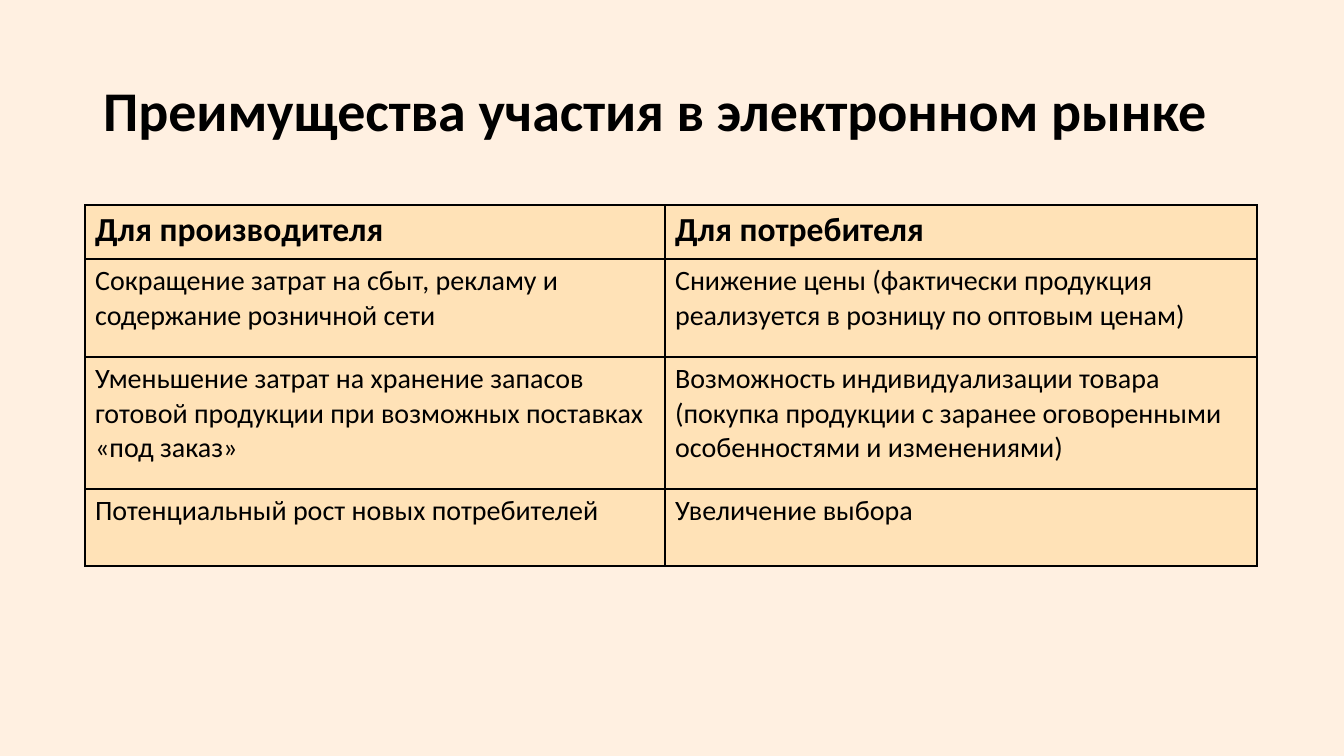
from lxml import etree
from pptx import Presentation, util as u
from pptx.dml.color import RGBColor
from pptx.enum import text as t
from pptx.oxml.ns import qn

PX = 914400 / 100.8
HUES = {"back": "FFF0E1", "cell": "FFE2B7", "ink": "000000"}
COLS = [580, 592]
ROWS = [54, 98, 132, 77]
GAINS = [
    ("Для производителя", "Для потребителя"),
    ("Сокращение затрат на сбыт, рекламу и содержание розничной сети",
     "Снижение цены (фактически продукция реализуется в розницу по оптовым ценам)"),
    ("Уменьшение затрат на хранение запасов готовой продукции при возможных поставках «под заказ»",
     "Возможность индивидуализации товара (покупка продукции с заранее оговоренными особенностями и изменениями)"),
    ("Потенциальный рост новых потребителей", "Увеличение выбора"),
]


def px(*vals):
    return [u.Emu(round(v * PX)) for v in vals]


def write(frame, words, size=20, bold=False, lead=1.0):
    par = frame.paragraphs[0]
    par.alignment = t.PP_ALIGN.LEFT
    par.line_spacing = lead
    run = par.add_run()
    run.text = words
    run.font.name = "Calibri"
    run.font.size = u.Pt(size)
    run.font.bold = bold
    run.font.color.rgb = RGBColor.from_string(HUES["ink"])


deck = Presentation()
deck.slide_width, deck.slide_height = px(1344, 756)
slide = deck.slides.add_slide(deck.slide_layouts[5])
back = slide.background.fill
back.solid()
back.fore_color.rgb = RGBColor.from_string(HUES["back"])

title = slide.shapes.title
title.left, title.top, title.width, title.height = px(93, 40, 1159, 146)
frame = title.text_frame
frame.word_wrap = True
frame.auto_size = t.MSO_AUTO_SIZE.NONE
frame.vertical_anchor = t.MSO_ANCHOR.MIDDLE
write(frame, "Преимущества участия в электронном рынке", size=40, bold=True, lead=0.9)

table = slide.shapes.add_table(
    len(ROWS), len(COLS), *px(85, 205, sum(COLS), sum(ROWS))).table
for col, wide in zip(table.columns, px(*COLS)):
    col.width = wide
for row, high in zip(table.rows, px(*ROWS)):
    row.height = high

for r, pair in enumerate(GAINS):
    for c, words in enumerate(pair):
        cell = table.cell(r, c)
        write(cell.text_frame, words, size=20 if r else 24, bold=r == 0)
        props = cell._tc.get_or_add_tcPr()
        for side in ("lnL", "lnR", "lnT", "lnB"):
            line = etree.SubElement(props, qn("a:" + side), w=str(u.Pt(1)))
            fill = etree.SubElement(line, qn("a:solidFill"))
            etree.SubElement(fill, qn("a:srgbClr"), val=HUES["ink"])
        cell.fill.solid()
        cell.fill.fore_color.rgb = RGBColor.from_string(HUES["cell"])

deck.save("out.pptx")
